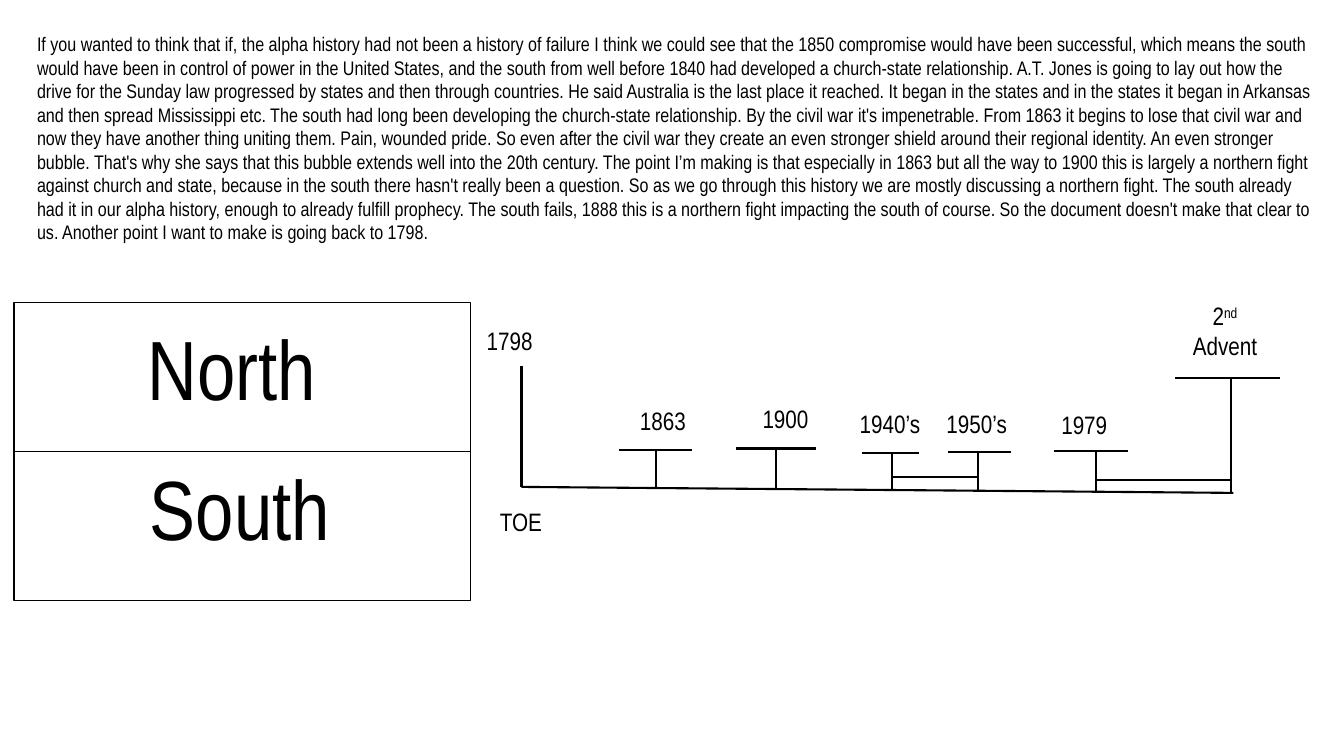
from pptx import Presentation
from pptx.dml.color import RGBColor
from pptx.enum.shapes import MSO_CONNECTOR, MSO_SHAPE
from pptx.enum.text import MSO_ANCHOR, PP_ALIGN
from pptx.oxml.ns import qn
from pptx.util import Pt
from lxml.etree import SubElement

BLACK = "000000"
FACE = "Arial Narrow"
START, END = 372.5, 881
TOP, SLOPE = 347.8, 0.0084

STORY = [
    "If you wanted to think that if, the alpha history had not been a history of failure "
    "I think we could see that the 1850 compromise would have been successful, which means "
    "the south would have been in control of power in the United States, and the south from "
    "well before 1840 had developed a church-state relationship.",
    "A.T. Jones is going to lay out how the drive for the Sunday law progressed by states "
    "and then through countries. He said Australia is the last place it reached. It began "
    "in the states and in the states it began in Arkansas and then spread Mississippi etc.",
    "The south had long been developing the church-state relationship. By the civil war "
    "it's impenetrable. From 1863 it begins to lose that civil war and now they have another "
    "thing uniting them. Pain, wounded pride. So even after the civil war they create an even "
    "stronger shield around their regional identity. An even stronger bubble.",
    "That's why she says that this bubble extends well into the 20th century. The point I’m "
    "making is that especially in 1863 but all the way to 1900 this is largely a northern "
    "fight against church and state, because in the south there hasn't really been a question.",
    "So as we go through this history we are mostly discussing a northern fight. The south "
    "already had it in our alpha history, enough to already fulfill prophecy. The south fails, "
    "1888 this is a northern fight impacting the south of course. So the document doesn't make "
    "that clear to us. Another point I want to make is going back to 1798.",
]

LABELS = [
    ("1798", 340.6, 229, 64),
    ("1863", 450, 286, 58),
    ("1900", 537.6, 284.5, 64),
    ("1940’s", 607, 288, 62),
    ("1950’s", 669, 288, 66),
    ("1979", 751, 288.7, 66),
    ("TOE", 350, 357.8, 52),
]

MARKS = [
    (468.5, 442, 494.5, 321.6),
    (554.4, 525.6, 583.2, 320.4),
    (637.2, 615.6, 656.6, 323.3),
    (698.8, 676.8, 722.2, 323),
    (782.6, 753, 805.7, 322.3),
    (879.5, 839.5, 914.4, 270),
]

SPANS = [(637.2, 698.8, 340.6), (782.6, 878.4, 342.7)]


def paint(text):
    return RGBColor.from_string(text)


def axis(x):
    return TOP + SLOPE * (x - START)


def style(run, size):
    for key, value in {"name": FACE, "size": Pt(size)}.items():
        setattr(run.font, key, value)
    run.font.color.rgb = paint(BLACK)


def add_text(slide, parts, left, top, width, height, size, align=PP_ALIGN.LEFT):
    box = slide.shapes.add_textbox(Pt(left), Pt(top), Pt(width), Pt(height))
    frame = box.text_frame
    for key, value in {"word_wrap": True, "vertical_anchor": MSO_ANCHOR.TOP}.items():
        setattr(frame, key, value)
    line = frame.paragraphs[0]
    line.alignment = align
    runs = []
    for part in parts:
        run = line.add_run()
        run.text = part
        style(run, size)
        runs.append(run)
    return runs


def add_line(slide, x1, y1, x2, y2):
    line = slide.shapes.add_connector(
        MSO_CONNECTOR.STRAIGHT, Pt(x1), Pt(y1), Pt(x2), Pt(y2))
    line.line.width = Pt(1.5)
    line.line.color.rgb = paint(BLACK)
    SubElement(line._element.spPr, qn("a:effectLst"))


def add_mark(slide, x, left, right, top):
    add_line(slide, left, top, right, top)
    add_line(slide, x, top, x, axis(x))


def add_panel(slide, top):
    panel = slide.shapes.add_shape(
        MSO_SHAPE.RECTANGLE, Pt(10), Pt(top), Pt(326), Pt(106.5))
    panel.shadow.inherit = False
    panel.fill.background()
    panel.line.width = Pt(1)
    panel.line.color.rgb = paint(BLACK)


def main():
    deck = Presentation()
    deck.slide_width, deck.slide_height = Pt(960), Pt(540)
    slide = deck.slides.add_slide(deck.slide_layouts[6])

    add_text(slide, [" ".join(STORY)], 19.4, 19.4, 931.7, 160, 14)

    add_line(slide, START, axis(START), END, axis(END))
    add_line(slide, START, 261.4, START, axis(START))
    for mark in MARKS:
        add_mark(slide, *mark)
    for left, right, y in SPANS:
        add_line(slide, left, y, right, y)
    for text, left, top, width in LABELS:
        add_text(slide, [text], left, top, width, 28.8, 18)
    advent = add_text(slide, ["2", "nd", " Advent"], 840, 211, 70, 59, 18, PP_ALIGN.CENTER)
    advent[1].font._element.set("baseline", "30000")

    for name, left, top, start in [("North", 98.6, 216, 222.5), ("South", 100, 322.5, 322.5)]:
        add_panel(slide, top)
        add_text(slide, [name], left, start, 180, 80, 60)

    deck.save("out.pptx")


if __name__ == "__main__":
    main()
